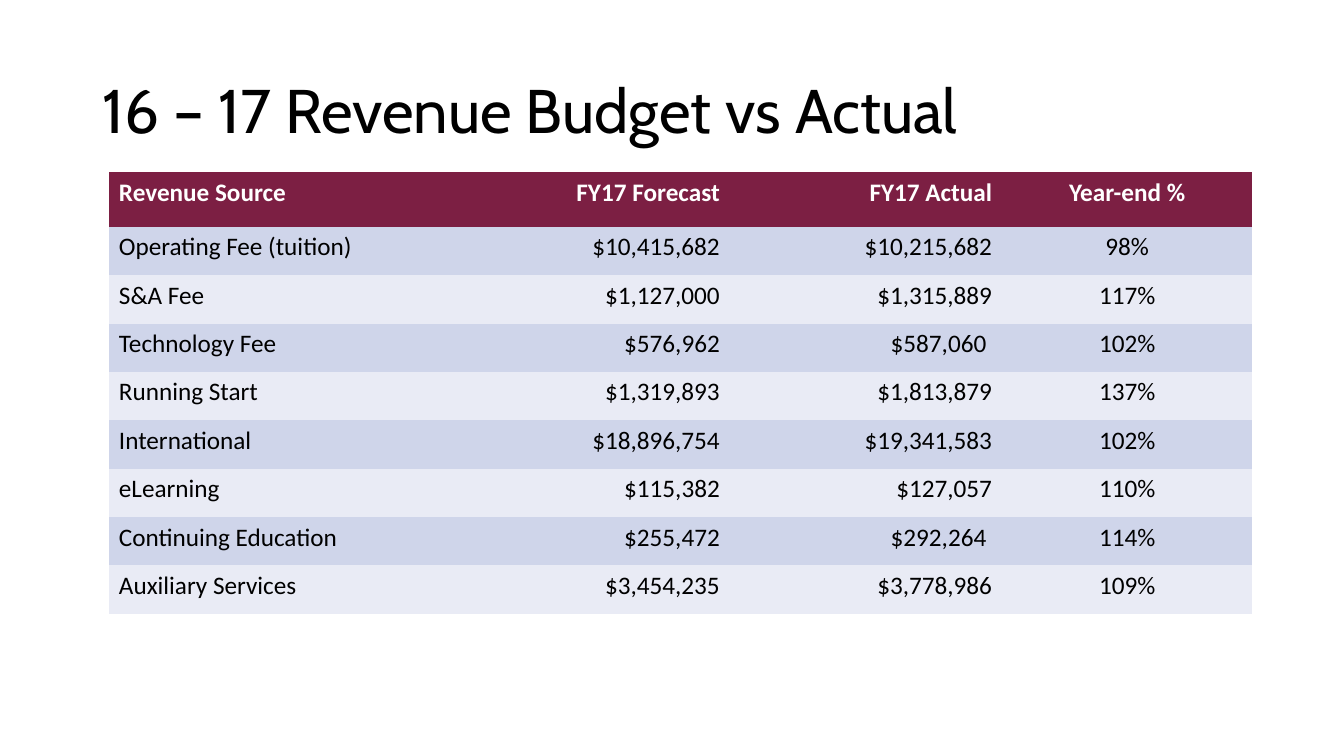
from dataclasses import dataclass

from pptx import Presentation
from pptx.dml.color import RGBColor
from pptx.enum.text import MSO_ANCHOR, PP_ALIGN
from pptx.util import Inches, Pt


@dataclass(frozen=True)
class Theme:
    title_font: str = "Cabin"
    table_font: str = "Calibri"
    title_size: int = 44
    table_size: int = 18
    text: str = "000000"
    header_text: str = "FFFFFF"
    header_fill: str = "7C1F43"
    bands: tuple = ("CFD5EA", "E9EBF5")


THEME = Theme()
PAGE_SIZE = (13.33, 7.5)
TITLE_BOX = (0.92, 0.4, 11.5, 1.45)
TABLE_BOX = (1.08, 1.71, 11.34, 4.38)
COLUMN_WIDTHS = (3.53, 2.63, 2.7, 2.48)
HEADER_HEIGHT = 0.54
ALIGNMENTS = (PP_ALIGN.LEFT, PP_ALIGN.RIGHT, PP_ALIGN.RIGHT, PP_ALIGN.CENTER)
PLAIN_TABLE_STYLE = "{2D5ABB26-0587-4C30-8999-92F81FD0307C}"

REVENUE = (
    ("Revenue Source", "FY17 Forecast", "FY17 Actual", "Year-end %"),
    ("Operating Fee (tuition)", "$10,415,682", "$10,215,682", "98%"),
    ("S&A Fee", "$1,127,000", "$1,315,889", "117%"),
    ("Technology Fee", "$576,962", "$587,060 ", "102%"),
    ("Running Start", "$1,319,893", "$1,813,879", "137%"),
    ("International", "$18,896,754", "$19,341,583", "102%"),
    ("eLearning", "$115,382", "$127,057", "110%"),
    ("Continuing Education", "$255,472", "$292,264 ", "114%"),
    ("Auxiliary Services", "$3,454,235", "$3,778,986", "109%"),
)


def set_font(para, name, size, color, bold=False):
    para.font.name = name
    para.font.size = Pt(size)
    para.font.bold = bold
    para.font.color.rgb = RGBColor.from_string(color)


def add_title(page, box, text):
    title = page.shapes.title
    title.left, title.top, title.width, title.height = map(Inches, box)
    frame = title.text_frame
    frame.text = text
    frame.vertical_anchor = MSO_ANCHOR.MIDDLE
    para = frame.paragraphs[0]
    para.alignment = PP_ALIGN.LEFT
    para.line_spacing = 0.9
    set_font(para, THEME.title_font, THEME.title_size, THEME.text)


def fill_cell(cell, text, alignment, fill, color, bold):
    cell.fill.solid()
    cell.fill.fore_color.rgb = RGBColor.from_string(fill)
    cell.text = text
    para = cell.text_frame.paragraphs[0]
    para.alignment = alignment
    set_font(para, THEME.table_font, THEME.table_size, color, bold)


def add_revenue_table(page, box, records):
    frame = page.shapes.add_table(len(records), len(records[0]), *map(Inches, box))
    table = frame.table
    # Plain style without grid lines
    table._tbl.tblPr[0].text = PLAIN_TABLE_STYLE

    # Column widths, and equal body rows below the header
    for column, width in zip(table.columns, COLUMN_WIDTHS):
        column.width = Inches(width)
    body_height = (box[3] - HEADER_HEIGHT) / (len(records) - 1)
    for index, row in enumerate(table.rows):
        row.height = Inches(body_height if index else HEADER_HEIGHT)

    # Header, then banded records
    for index, record in enumerate(records):
        is_header = index == 0
        fill = THEME.header_fill if is_header else THEME.bands[(index - 1) % 2]
        color = THEME.header_text if is_header else THEME.text
        for cell, text, alignment in zip(table.rows[index].cells, record, ALIGNMENTS):
            fill_cell(cell, text, alignment, fill, color, is_header)


def main():
    deck = Presentation()
    deck.slide_width, deck.slide_height = map(Inches, PAGE_SIZE)
    page = deck.slides.add_slide(deck.slide_layouts.get_by_name("Title Only"))
    add_title(page, TITLE_BOX, "16 – 17 Revenue Budget vs Actual")
    add_revenue_table(page, TABLE_BOX, REVENUE)
    deck.save("out.pptx")


if __name__ == "__main__":
    main()
